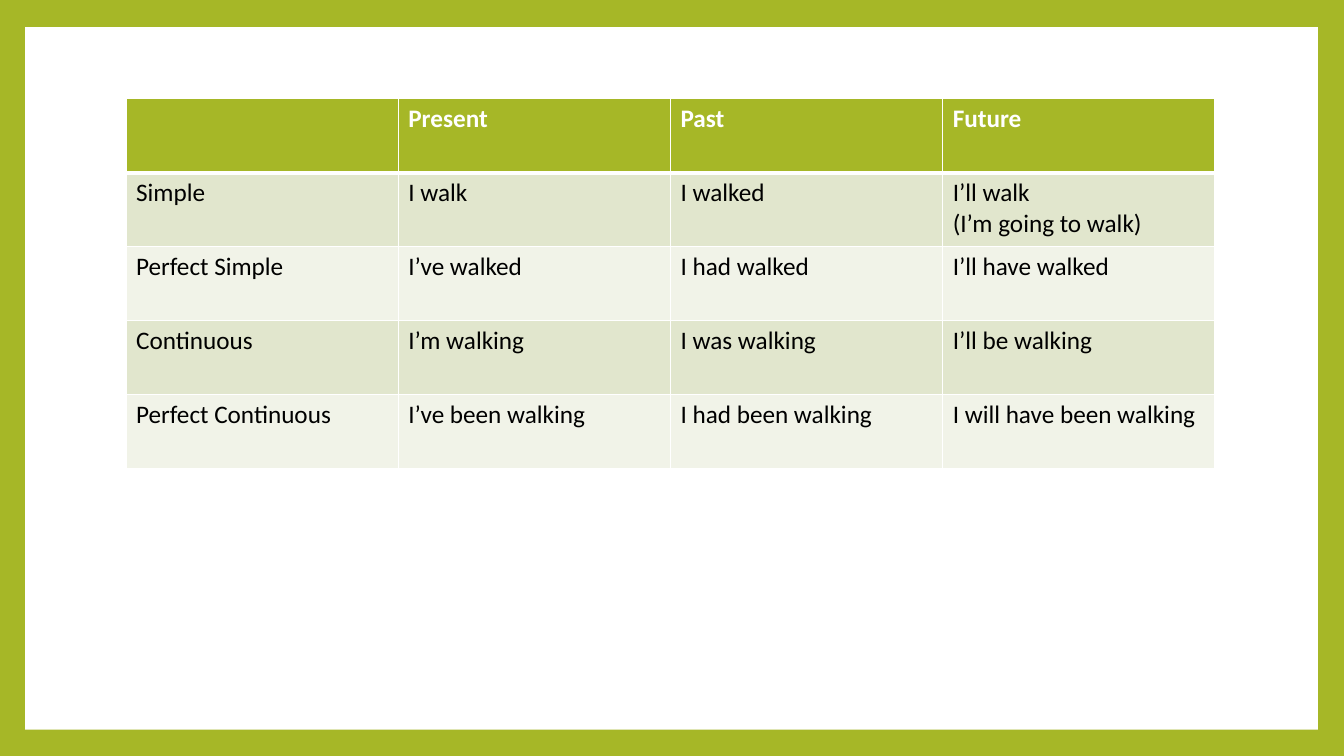
from lxml.etree import SubElement
from pptx import Presentation
from pptx.dml.color import RGBColor
from pptx.enum.shapes import MSO_SHAPE
from pptx.oxml.ns import qn
from pptx.util import Inches, Pt

TENSES = [
    ["", "Present", "Past", "Future"],
    ["Simple", "I walk", "I walked", "I’ll walk\n(I’m going to walk)"],
    ["Perfect Simple", "I’ve walked", "I had walked", "I’ll have walked"],
    ["Continuous", "I’m walking", "I was walking", "I’ll be walking"],
    ["Perfect Continuous", "I’ve been walking", "I had been walking",
     "I will have been walking"],
]
GREEN, WHITE, BLACK = "A6B727", "FFFFFF", "000000"
BANDS = ["F1F3E8", "E1E6CD"]
FONT, TEXT_SIZE = "Calibri", 18
SLIDE_WIDTH, SLIDE_HEIGHT = 13.33, 7.5
PANEL = (0.25, 0.27, 12.82, 6.97)
TABLE_LEFT, TABLE_TOP = 1.25, 0.98
COLUMN_WIDTH, ROW_HEIGHT = 2.7, 0.734
THIN, THICK = 1, 3


def paint(fill, color):
    fill.solid()
    fill.fore_color.rgb = RGBColor.from_string(color)


def add_borders(cell, widths):
    """Draw white cell borders; widths maps each side (L, R, T, B) to points."""
    properties = cell._tc.get_or_add_tcPr()
    for side, width in widths.items():
        line = SubElement(properties, qn(f"a:ln{side}"), w=str(Pt(width)))
        solid = SubElement(line, qn("a:solidFill"))
        SubElement(solid, qn("a:srgbClr"), val=WHITE)


def write_cell(cell, text, color, bold):
    for index, line in enumerate(text.split("\n") if text else []):
        frame = cell.text_frame
        paragraph = frame.add_paragraph() if index else frame.paragraphs[0]
        run = paragraph.add_run()
        run.text = line
        run.font.name, run.font.size, run.font.bold = FONT, Pt(TEXT_SIZE), bold
        run.font.color.rgb = RGBColor.from_string(color)


def add_tense_table(slide):
    row_count, column_count = len(TENSES), len(TENSES[0])
    table = slide.shapes.add_table(
        row_count, column_count, Inches(TABLE_LEFT), Inches(TABLE_TOP),
        Inches(COLUMN_WIDTH * column_count), Inches(ROW_HEIGHT * row_count),
    ).table
    for row_index, texts in enumerate(TENSES):
        is_header = row_index == 0
        widths = {"L": THIN, "R": THIN,
                  "T": THICK if row_index == 1 else THIN,
                  "B": THICK if is_header else THIN}
        for column_index, text in enumerate(texts):
            cell = table.cell(row_index, column_index)
            add_borders(cell, widths)
            paint(cell.fill, GREEN if is_header else BANDS[row_index % 2])
            write_cell(cell, text, WHITE if is_header else BLACK, is_header)


def main():
    presentation = Presentation()
    presentation.slide_width = Inches(SLIDE_WIDTH)
    presentation.slide_height = Inches(SLIDE_HEIGHT)
    slide = presentation.slides.add_slide(presentation.slide_layouts[6])
    paint(slide.background.fill, GREEN)
    panel = slide.shapes.add_shape(MSO_SHAPE.RECTANGLE, *map(Inches, PANEL))
    panel.shadow.inherit = False
    panel.line.fill.background()
    paint(panel.fill, WHITE)
    add_tense_table(slide)
    presentation.save("out.pptx")


if __name__ == "__main__":
    main()
